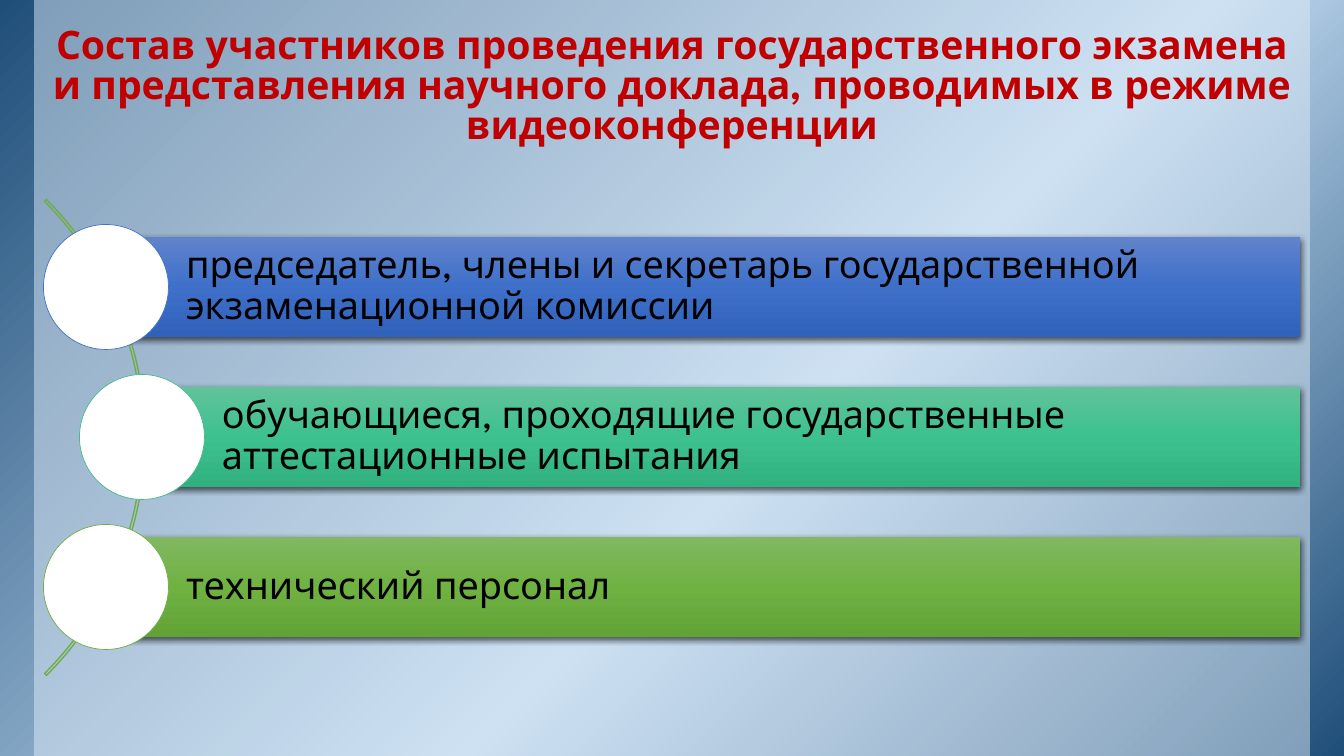
from lxml import etree
from pptx import Presentation
from pptx.dml.color import RGBColor
from pptx.enum.shapes import MSO_SHAPE
from pptx.enum.text import MSO_ANCHOR, PP_ALIGN
from pptx.oxml.ns import qn
from pptx.util import Emu, Pt

RECTANGLE, OVAL, BLOCK_ARC = MSO_SHAPE.RECTANGLE, MSO_SHAPE.OVAL, MSO_SHAPE.BLOCK_ARC
MIDDLE, BOTTOM = MSO_ANCHOR.MIDDLE, MSO_ANCHOR.BOTTOM
LEFT, CENTER = PP_ALIGN.LEFT, PP_ALIGN.CENTER

EMU_PER_PX = 914400 / 100.8
SLIDE_WIDTH, SLIDE_HEIGHT = 1344, 756
FONT = "League Spartan"

BLACK = RGBColor(0x00, 0x00, 0x00)
WHITE = RGBColor(0xFF, 0xFF, 0xFF)
TITLE_RED = RGBColor(0xC0, 0x00, 0x00)
PANEL_BLUE = RGBColor(0xDE, 0xEB, 0xF7)
NAVY = RGBColor(0x1F, 0x4E, 0x79)
SKY = RGBColor(0xBD, 0xD7, 0xEE)
BLUE = RGBColor(0x44, 0x72, 0xC4)
TEAL = RGBColor(0x43, 0xBB, 0x8D)
GREEN = RGBColor(0x70, 0xAD, 0x47)
BLUE_BAR = (RGBColor(0x61, 0x83, 0xCB), RGBColor(0x3E, 0x70, 0xCA), RGBColor(0x30, 0x62, 0xBB))
TEAL_BAR = (RGBColor(0x60, 0xC3, 0x9A), RGBColor(0x3D, 0xC1, 0x8F), RGBColor(0x31, 0xB0, 0x80))
GREEN_BAR = (RGBColor(0x81, 0xB8, 0x61), RGBColor(0x6F, 0xB2, 0x42), RGBColor(0x62, 0xA3, 0x36))

TITLE = ("Состав участников проведения государственного экзамена "
         "и представления научного доклада, проводимых в режиме видеоконференции")
# text, left edge of the bar, bar gradient, circle outline
PARTICIPANTS = [
    ("председатель, члены и секретарь государственной экзаменационной комиссии",
     106, BLUE_BAR, BLUE),
    ("обучающиеся, проходящие государственные аттестационные испытания",
     142, TEAL_BAR, TEAL),
    ("технический персонал", 106, GREEN_BAR, GREEN),
]
BAR_TOP, BAR_HEIGHT, BAR_RIGHT, BAR_PITCH = 237, 100, 1300, 150
CIRCLE_SIZE = 125


def px(length):
    return Emu(round(length * EMU_PER_PX))


def add_color(parent, color, alpha=None):
    element = etree.SubElement(parent, qn("a:srgbClr"), val=str(color))
    if alpha is not None:
        etree.SubElement(element, qn("a:alpha"), val=str(alpha * 1000))


def add_shape(slide, kind, left, top, width, height, fill=None, line=None, line_width=1):
    shape = slide.shapes.add_shape(kind, px(left), px(top), px(width), px(height))
    shape.shadow.inherit = False
    if fill is None:
        shape.fill.background()
    else:
        shape.fill.solid()
        shape.fill.fore_color.rgb = fill
    if line is None:
        shape.line.fill.background()
    else:
        shape.line.color.rgb = line
        shape.line.width = Pt(line_width)
    return shape


def set_gradient(shape, stops, angle):
    """Fill with (percent, color) stops, the angle in degrees clockwise."""
    shape.fill.gradient()
    gradient = shape.element.spPr.find(qn("a:gradFill"))
    for child in list(gradient):
        gradient.remove(child)
    stop_list = etree.SubElement(gradient, qn("a:gsLst"))
    for percent, color in stops:
        stop = etree.SubElement(stop_list, qn("a:gs"), pos=str(percent * 1000))
        add_color(stop, color)
    etree.SubElement(gradient, qn("a:lin"), ang=str(angle * 60000), scaled="0")


def set_transparency(shape, alpha):
    color = shape.element.spPr.find(qn("a:solidFill")).find(qn("a:srgbClr"))
    etree.SubElement(color, qn("a:alpha"), val=str(alpha * 1000))


def add_drop_shadow(shape):
    effects = shape.element.spPr.find(qn("a:effectLst"))
    shadow = etree.SubElement(effects, qn("a:outerShdw"), blurRad=str(Pt(4.5)),
                              dist=str(Pt(1.5)), dir="5400000", algn="ctr", rotWithShape="0")
    add_color(shadow, BLACK, 63)


def write_text(shape, text, size, color, bold, align, anchor, spacing, margins):
    frame = shape.text_frame
    frame.word_wrap = True
    frame.vertical_anchor = anchor
    (frame.margin_left, frame.margin_top,
     frame.margin_right, frame.margin_bottom) = map(px, margins)
    frame.text = text
    paragraph = frame.paragraphs[0]
    paragraph.alignment = align
    paragraph.line_spacing = spacing
    font = paragraph.runs[0].font
    font.name, font.size, font.bold = FONT, Pt(size), bold
    font.color.rgb = color


def add_backdrop(slide):
    backdrop = add_shape(slide, RECTANGLE, 0, 0, SLIDE_WIDTH, SLIDE_HEIGHT)
    set_gradient(backdrop, [(0, NAVY), (58, SKY), (100, NAVY)], 45)
    panel = add_shape(slide, RECTANGLE, 34, 0, 1276, SLIDE_HEIGHT, PANEL_BLUE)
    set_transparency(panel, 50)


def add_title(slide):
    title = slide.shapes.add_textbox(px(37), px(8), px(1270), px(147))
    write_text(title, TITLE, 28, TITLE_RED, True, CENTER, BOTTOM, 0.85, (13, 7, 13, 7))


def add_arc(slide):
    arc = add_shape(slide, BLOCK_ARC, -528, 101, 673, 673, line=GREEN)
    for index, value in enumerate((189, 27, 0.004)):
        arc.adjustments[index] = value


def add_participant(slide, top, text, left, colors, outline):
    bar = add_shape(slide, RECTANGLE, left, top, BAR_RIGHT - left, BAR_HEIGHT)
    set_gradient(bar, zip((0, 50, 100), colors), 90)
    add_drop_shadow(bar)
    write_text(bar, text, 27, BLACK, False, LEFT, MIDDLE, 0.9, (80, 7, 7, 7))
    add_shape(slide, OVAL, left - CIRCLE_SIZE / 2, top + (BAR_HEIGHT - CIRCLE_SIZE) / 2,
              CIRCLE_SIZE, CIRCLE_SIZE, WHITE, outline, 0.5)


def main():
    presentation = Presentation()
    presentation.slide_width, presentation.slide_height = px(SLIDE_WIDTH), px(SLIDE_HEIGHT)
    slide = presentation.slides.add_slide(presentation.slide_layouts[6])
    add_backdrop(slide)
    add_title(slide)
    add_arc(slide)
    for row, participant in enumerate(PARTICIPANTS):
        add_participant(slide, BAR_TOP + row * BAR_PITCH, *participant)
    presentation.save("out.pptx")


if __name__ == "__main__":
    main()
